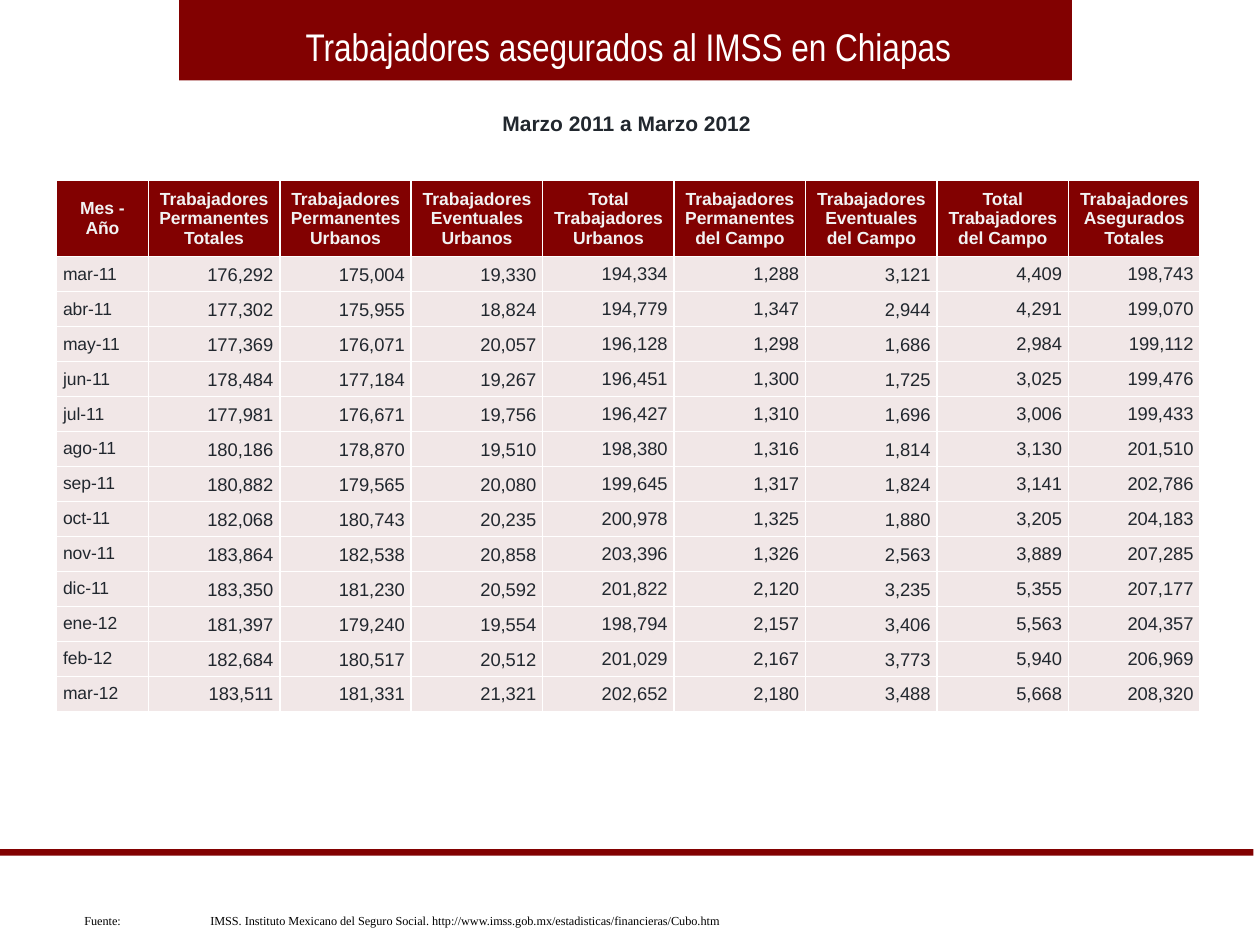
import pptx
import pptx.dml.color
import pptx.enum.shapes
import pptx.enum.text
import pptx.oxml.ns
import pptx.util
from lxml import etree

Cm = pptx.util.Cm
Pt = pptx.util.Pt
RGBColor = pptx.dml.color.RGBColor
ALIGN = pptx.enum.text.PP_ALIGN
ANCHOR = pptx.enum.text.MSO_ANCHOR

MAROON = RGBColor(0x82, 0x01, 0x01)
ROSE = RGBColor(0xF1, 0xE7, 0xE7)
INK = RGBColor(0x21, 0x27, 0x2E)
PALE = RGBColor(0xF2, 0xF2, 0xF2)
WHITE = RGBColor(0xFF, 0xFF, 0xFF)
BLACK = RGBColor(0x00, 0x00, 0x00)

HEADERS = [
    "Mes - Año",
    "Trabajadores Permanentes Totales",
    "Trabajadores Permanentes Urbanos",
    "Trabajadores Eventuales Urbanos",
    "Total Trabajadores Urbanos",
    "Trabajadores Permanentes del Campo",
    "Trabajadores Eventuales del Campo",
    "Total Trabajadores del Campo",
    "Trabajadores Asegurados Totales",
]
WORKERS = [
    ("mar-11", 176292, 175004, 19330, 194334, 1288, 3121, 4409, 198743),
    ("abr-11", 177302, 175955, 18824, 194779, 1347, 2944, 4291, 199070),
    ("may-11", 177369, 176071, 20057, 196128, 1298, 1686, 2984, 199112),
    ("jun-11", 178484, 177184, 19267, 196451, 1300, 1725, 3025, 199476),
    ("jul-11", 177981, 176671, 19756, 196427, 1310, 1696, 3006, 199433),
    ("ago-11", 180186, 178870, 19510, 198380, 1316, 1814, 3130, 201510),
    ("sep-11", 180882, 179565, 20080, 199645, 1317, 1824, 3141, 202786),
    ("oct-11", 182068, 180743, 20235, 200978, 1325, 1880, 3205, 204183),
    ("nov-11", 183864, 182538, 20858, 203396, 1326, 2563, 3889, 207285),
    ("dic-11", 183350, 181230, 20592, 201822, 2120, 3235, 5355, 207177),
    ("ene-12", 181397, 179240, 19554, 198794, 2157, 3406, 5563, 204357),
    ("feb-12", 182684, 180517, 20512, 201029, 2167, 3773, 5940, 206969),
    ("mar-12", 183511, 181331, 21321, 202652, 2180, 3488, 5668, 208320),
]
BOTTOM_COLUMNS = {1, 2, 3, 6}


def write(frame, text, *, size, color, font="Arial", bold=False, align=ALIGN.LEFT, tab=None):
    """Put one formatted paragraph in a text frame, with an optional tab stop."""
    para = frame.paragraphs[0]
    para.alignment = align
    if tab is not None:
        stops = etree.SubElement(para._p.get_or_add_pPr(), pptx.oxml.ns.qn("a:tabLst"))
        etree.SubElement(stops, pptx.oxml.ns.qn("a:tab"), pos=str(int(tab)), algn="l")
    span = para.add_run()
    span.text = text
    span.font.name = font
    span.font.size = Pt(size)
    span.font.bold = bold
    span.font.color.rgb = color


def add_borders(cell, color, width):
    properties = cell._tc.get_or_add_tcPr()
    for side in ("lnL", "lnR", "lnT", "lnB"):
        line = etree.SubElement(properties, pptx.oxml.ns.qn(f"a:{side}"), w=str(int(width)))
        fill = etree.SubElement(line, pptx.oxml.ns.qn("a:solidFill"))
        etree.SubElement(fill, pptx.oxml.ns.qn("a:srgbClr"), val=str(color))


class Builder:
    def __init__(self, page):
        self.page = page
        self.accent = MAROON
        self.inset = Cm(0.13)

    def bar(self, left, top, width, height):
        shape = self.page.shapes.add_shape(
            pptx.enum.shapes.MSO_SHAPE.RECTANGLE, Cm(left), Cm(top), Cm(width), Cm(height)
        )
        shape.shadow.inherit = False
        shape.fill.solid()
        shape.fill.fore_color.rgb = self.accent
        shape.line.fill.background()

    def text(self, left, top, width, height, text, *, wrap=True, **style):
        box = self.page.shapes.add_textbox(Cm(left), Cm(top), Cm(width), Cm(height))
        box.text_frame.word_wrap = wrap
        box.text_frame.auto_size = pptx.enum.text.MSO_AUTO_SIZE.SHAPE_TO_FIT_TEXT
        write(box.text_frame, text, **style)

    def cell(self, cell, text, *, fill, anchor=ANCHOR.MIDDLE, **style):
        cell.margin_left = cell.margin_right = self.inset
        cell.margin_top = cell.margin_bottom = self.inset
        cell.vertical_anchor = anchor
        add_borders(cell, WHITE, Pt(1))
        cell.fill.solid()
        cell.fill.fore_color.rgb = fill
        write(cell.text_frame, text, **style)

    def table(self, left, top, column_widths, row_heights, headers, records):
        """Add a table with a month column followed by number columns."""
        table = self.page.shapes.add_table(
            len(row_heights), len(column_widths), Cm(left), Cm(top),
            Cm(sum(column_widths)), Cm(sum(row_heights)),
        ).table
        table.horz_banding = False
        for column, width in zip(table.columns, column_widths):
            column.width = Cm(width)
        for row, height in zip(table.rows, row_heights):
            row.height = Cm(height)
        for column, header in enumerate(headers):
            self.cell(table.cell(0, column), header, fill=self.accent,
                      size=10, color=PALE, bold=True, align=ALIGN.CENTER)
        for row, (month, *counts) in enumerate(records, start=1):
            self.cell(table.cell(row, 0), month, fill=ROSE, size=10, color=INK)
            for column, count in enumerate(counts, start=1):
                anchor = ANCHOR.BOTTOM if column in BOTTOM_COLUMNS else ANCHOR.MIDDLE
                self.cell(table.cell(row, column), f"{count:,}", fill=ROSE, anchor=anchor,
                          size=10.5, color=INK, align=ALIGN.RIGHT)


def main():
    deck = pptx.Presentation()
    deck.slide_width, deck.slide_height = Cm(25.4), Cm(19.05)
    builder = Builder(deck.slides.add_slide(deck.slide_layouts[6]))

    builder.bar(3.61, 0, 18, 1.62)
    builder.bar(0, 17.12, 25.27, 0.13)
    builder.text(9.88, 2.11, 5.56, 0.76, "Marzo 2011 a Marzo 2012", wrap=False,
                 size=12, color=INK, bold=True)
    builder.text(
        1.45, 18.29, 14.6, 0.56,
        "Fuente:\tIMSS. Instituto Mexicano del Seguro Social. "
        "http://www.imss.gob.mx/estadisticas/financieras/Cubo.htm",
        size=7, color=BLACK, font="Times New Roman", tab=Cm(2.54),
    )
    builder.table(1.14, 3.64, [1.85] + [2.65] * 8, [1.51] + [0.7] * len(WORKERS),
                  HEADERS, WORKERS)
    builder.text(3.71, 0.33, 17.91, 1.19, "Trabajadores asegurados al IMSS en Chiapas",
                 size=22, color=WHITE, font="Arial Narrow", align=ALIGN.CENTER)

    deck.save("out.pptx")


if __name__ == "__main__":
    main()
